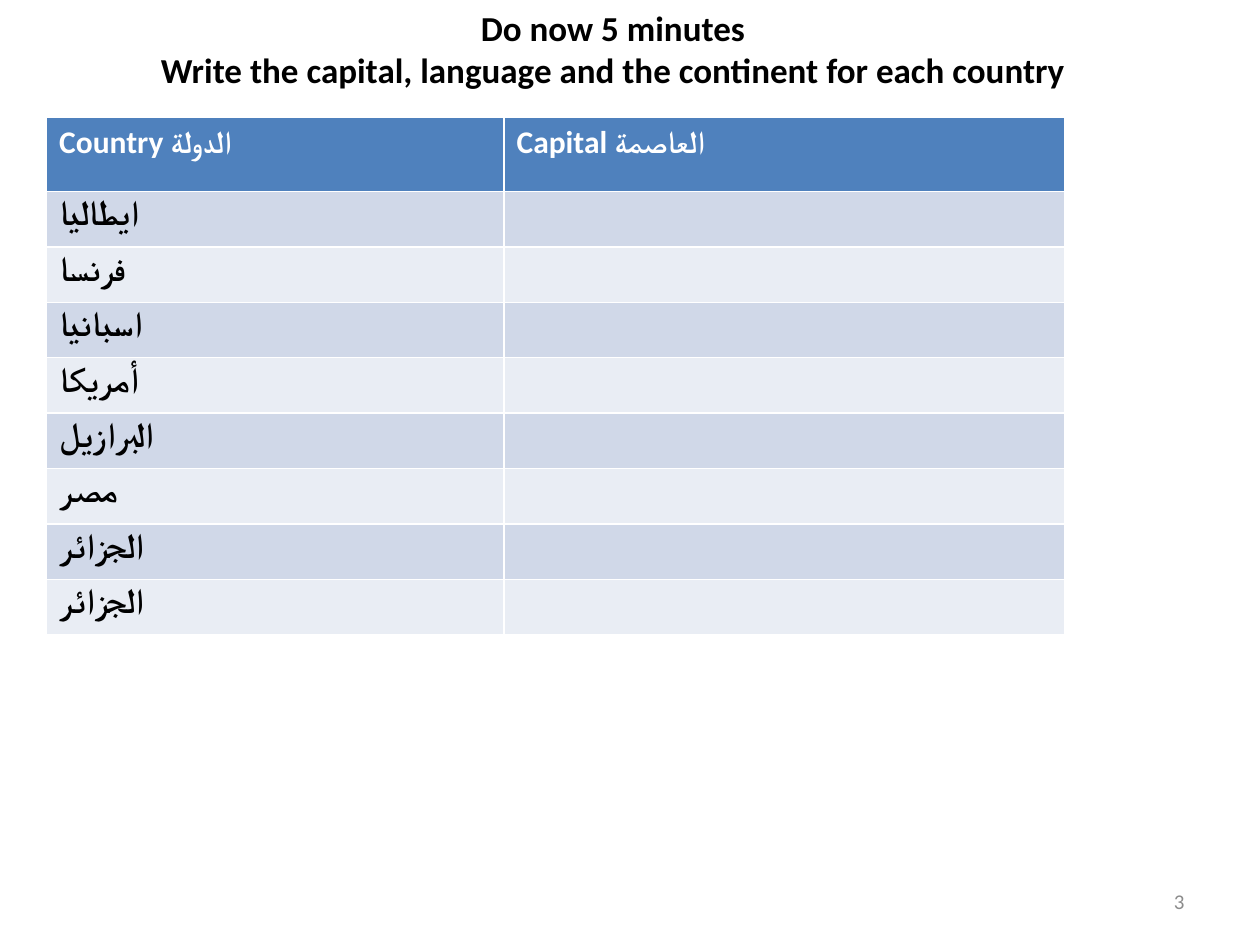
from pptx import Presentation
from pptx.dml.color import RGBColor
from pptx.enum.text import MSO_ANCHOR as Anchor, MSO_AUTO_SIZE as Fit, PP_ALIGN as Align
from pptx.util import Inches, Pt

WIDE, HIGH = 10, 7.5
HEADS = ["Country الدولة", "Capital العاصمة"]
LANDS = ["ايطاليا", "فرنسا", "اسبانيا", "أمريكا", "البرازيل", "مصر", "الجزائر", "الجزائر"]
COLS = [3.63, 4.45]
HEAD_ROW, LAND_ROW = 0.59, 0.44
HEAD_FILL, BANDS = "4F81BD", ["D0D8E8", "E9EDF4"]
TITLE = {"size": Pt(20), "bold": True, "color": "000000"}
HEAD = {"size": Pt(18), "bold": True, "color": "FFFFFF"}
LAND = {"size": Pt(20), "bold": True, "color": "000000"}
PAGE = {"size": Pt(12), "bold": False, "color": "8C8C8C"}


def hue(code):
    return RGBColor.from_string(code)


def place(shape, left, top, width, height):
    shape.left, shape.top = Inches(left), Inches(top)
    shape.width, shape.height = Inches(width), Inches(height)


def write(frame, lines, form, align, anchor=Anchor.TOP):
    frame.vertical_anchor = anchor
    for i, line in enumerate(lines):
        para = frame.paragraphs[0] if i == 0 else frame.add_paragraph()
        para.alignment = align
        run = para.add_run()
        run.text = line
        run.font.name = "Calibri"
        for name, value in form.items():
            if name == "color":
                run.font.color.rgb = hue(value)
            else:
                setattr(run.font, name, value)


def add_title(slide):
    title = slide.shapes.title
    place(title, 0.14, 0, 9.45, 0.77)
    title.text_frame.auto_size = Fit.NONE
    write(title.text_frame,
          ["Do now 5 minutes",
           "Write the capital, language and the continent for each country"],
          TITLE, Align.CENTER)


def add_grid(slide):
    rows = [HEADS] + [[land, ""] for land in LANDS]
    high = HEAD_ROW + LAND_ROW * len(LANDS)
    grid = slide.shapes.add_table(len(rows), len(COLS), Inches(0.37), Inches(0.93),
                                  Inches(sum(COLS)), Inches(high)).table
    for col, width in zip(grid.columns, COLS):
        col.width = Inches(width)
    for r, texts in enumerate(rows):
        grid.rows[r].height = Inches(LAND_ROW if r else HEAD_ROW)
        for c, text in enumerate(texts):
            cell = grid.cell(r, c)
            cell.fill.solid()
            cell.fill.fore_color.rgb = hue(BANDS[(r - 1) % 2] if r else HEAD_FILL)
            if text:
                write(cell.text_frame, [text], LAND if r else HEAD, Align.LEFT)


def add_page(slide, number):
    box = slide.shapes.add_textbox(0, 0, 0, 0)
    place(box, 7.17, 6.95, 2.33, 0.4)
    box.text_frame.word_wrap = True
    write(box.text_frame, [number], PAGE, Align.RIGHT, Anchor.MIDDLE)


def main():
    deck = Presentation()
    deck.slide_width, deck.slide_height = Inches(WIDE), Inches(HIGH)
    slide = deck.slides.add_slide(deck.slide_layouts[5])
    add_grid(slide)
    add_title(slide)
    add_page(slide, "3")
    deck.save("out.pptx")


if __name__ == "__main__":
    main()
